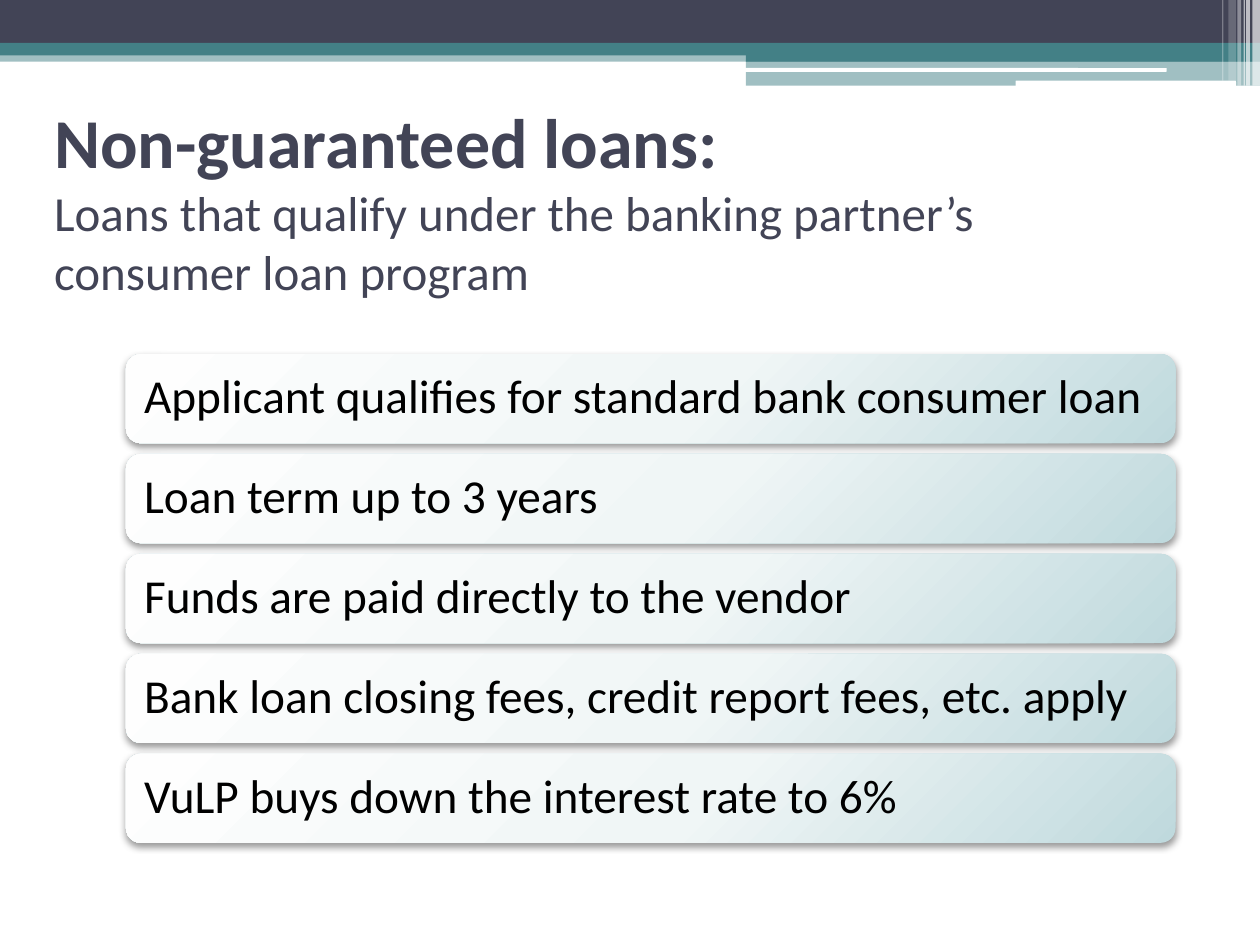
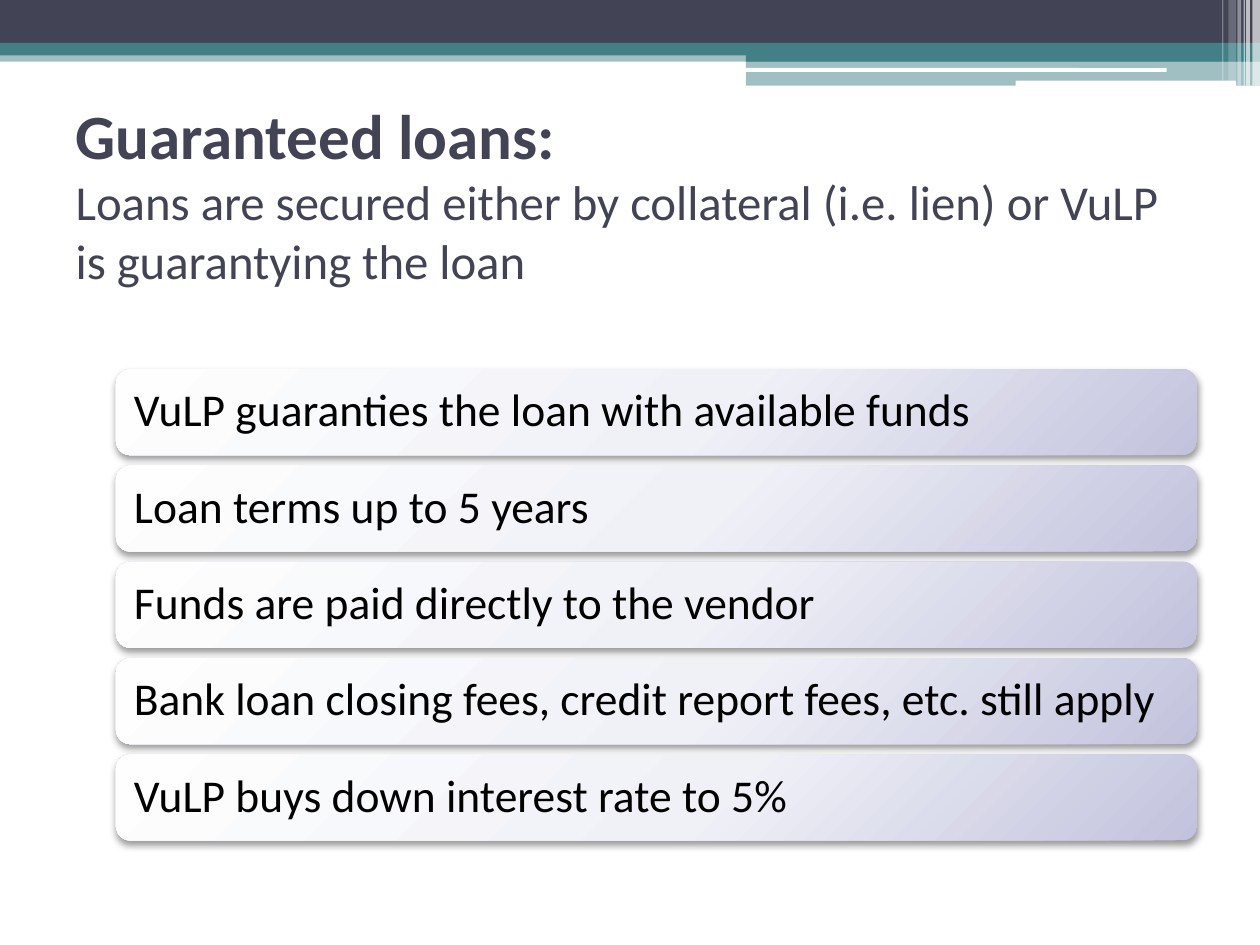
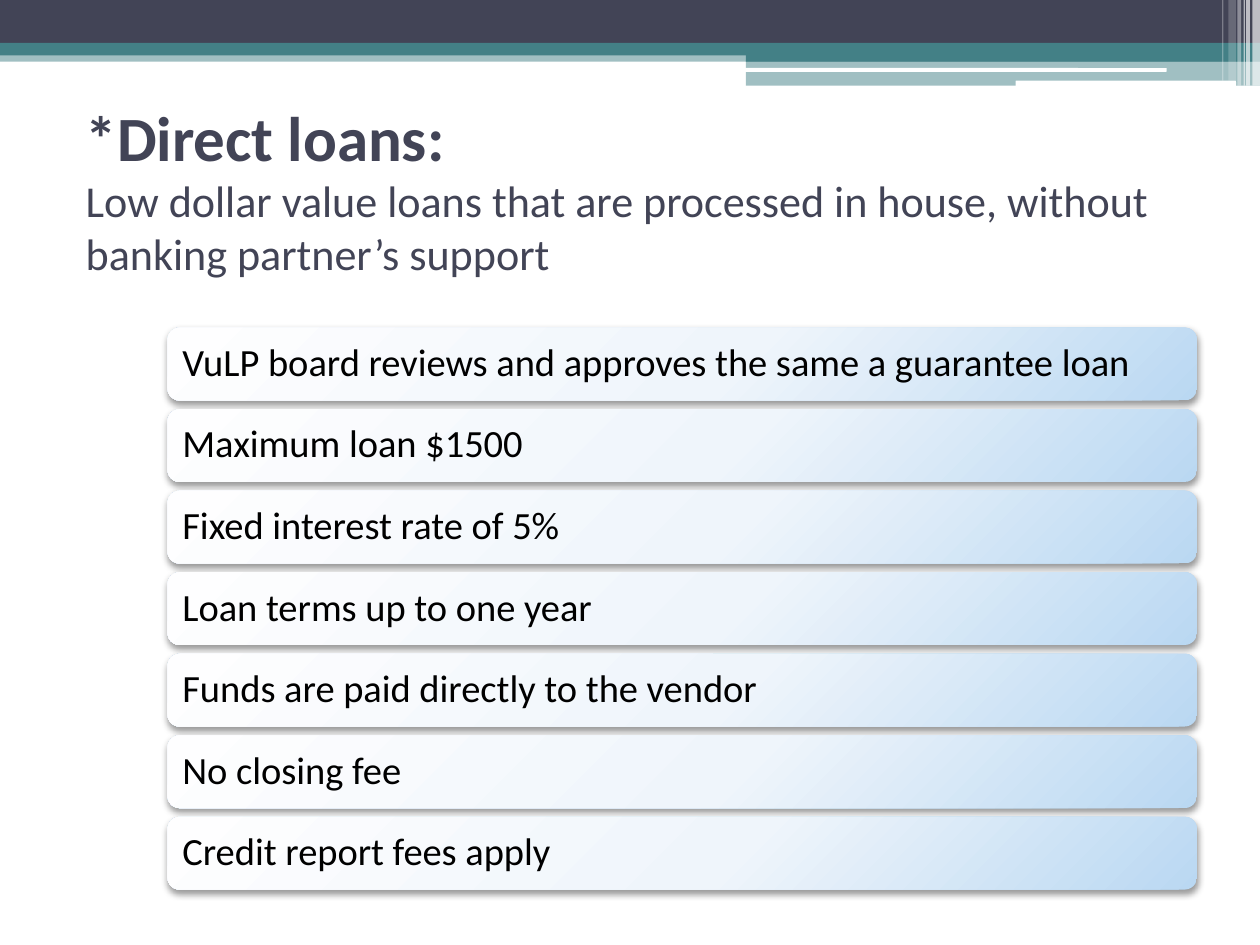
from pptx import Presentation
from pptx.dml.color import RGBColor as Rgb
from pptx.enum.shapes import MSO_SHAPE as Kind
from pptx.enum.text import MSO_ANCHOR as Anchor, MSO_AUTO_SIZE as Fit, PP_ALIGN as Align
from pptx.oxml import parse_xml
from pptx.oxml.ns import nsdecls, qn
from pptx.util import Emu, Inches, Pt

WIDE, HIGH = Inches(10), Inches(7.5)
FONT = "Calibri"
GAP = 0.12
HUES = {"navy": "424456", "teal": "438086", "white": "FFFFFF", "black": "000000"}
FADES = {
    "teal": ("FEFEFE", "F0F6F6", "BFD9DD"),
    "lilac": ("FEFEFE", "F0F1F7", "C2C2DD"),
    "blue": ("FEFEFF", "EFF5FB", "BAD8F2"),
}
BANDS = [
    (0, 5.33, 100, 1.2, "teal", 50),
    (0, 0, 100, 4.53, "navy", 100),
    (0, 4.53, 100, 1.33, "teal", 100),
    (59.2, 5.2, 40.8, 1.33, "teal", 100),
    (59.2, 6.4, 40.8, 2.67, "teal", 50),
]
RULES = [
    (59.1, 7.2, 33.5, 0.4, "white", 100),
    (80.6, 8.53, 17.5, 0.6, "white", 100),
]
STRIPES = [
    (99.4, 0.6, 9.07, 65),
    (98.9, 0.3, 9.07, 65),
    (98.7, 0.1, 9.07, 60),
    (98.2, 0.3, 9.07, 40),
    (97.5, 0.6, 8.53, 20),
    (97, 0.1, 8.53, 30),
]
PAGES = [
    {
        "head": "Non-guaranteed loans: ",
        "note": "Loans that qualify under the banking partner’s consumer loan program",
        "sizes": (40, 28),
        "title": (3.3, 10, 90, 22.27),
        "list": (10, 37.47, 83.3, 51.73),
        "fade": "teal",
        "size": 27,
        "inset": 0.11,
        "items": [
            "Applicant qualifies for standard bank consumer loan",
            "Loan term up to 3 years",
            "Funds are paid directly to the vendor",
            "Bank loan closing fees, credit report fees, etc. apply",
            "VuLP buys down the interest rate to 6%",
        ],
    },
    {
        "head": "Guaranteed loans: ",
        "note": "Loans are secured either by collateral (i.e. lien) or VuLP is guarantying the loan",
        "sizes": (36, 27.9),
        "title": (5, 10, 90, 20.8),
        "list": (9.2, 39.07, 85.8, 49.87),
        "fade": "lilac",
        "size": 26,
        "inset": 0.11,
        "items": [
            "VuLP guaranties the loan with available funds",
            "Loan terms up to 5 years",
            "Funds are paid directly to the vendor",
            "Bank loan closing fees, credit report fees, etc. still apply",
            "VuLP buys down interest rate to 5%",
        ],
    },
    {
        "head": "*Direct loans: ",
        "note": "Low dollar value loans that are processed in house, without banking partner’s support",
        "sizes": (36, 25.2),
        "title": (5.8, 10, 90, 20),
        "list": (13.3, 34.67, 81.7, 59.47),
        "fade": "blue",
        "size": 22,
        "inset": 0.09,
        "items": [
            "VuLP board reviews and approves the same a guarantee loan",
            "Maximum loan $1500",
            "Fixed interest rate of 5%",
            "Loan terms up to one year",
            "Funds are paid directly to the vendor",
            "No closing fee",
            "Credit report fees apply",
        ],
    },
]


def scale(box):
    """Turn a box in percent of the slide into lengths."""
    return [Emu(round(part * side / 100)) for part, side in zip(box, (WIDE, HIGH) * 2)]


def style(run, size, hue, bold=False):
    """Format one run."""
    font = run.font
    font.name, font.size, font.bold = FONT, Pt(size), bold
    font.color.rgb = Rgb.from_string(HUES[hue])


def bar(slide, kind, box, hue, alpha):
    """Add one flat bar and return it."""
    shape = slide.shapes.add_shape(kind, *scale(box))
    shape.shadow.inherit = False
    shape.line.fill.background()
    shape.fill.solid()
    shape.fill.fore_color.rgb = Rgb.from_string(HUES[hue])
    if alpha < 100:
        tint = shape.element.spPr.find(".//" + qn("a:srgbClr"))
        tint.append(parse_xml(f'<a:alpha {nsdecls("a")} val="{alpha * 1000}"/>'))
    return shape


def banner(slide, layout):
    """Draw the top bands and hand them to the layout that all slides share."""
    bars = [bar(slide, Kind.RECTANGLE, row[:4], *row[4:]) for row in BANDS]
    bars += [bar(slide, Kind.ROUNDED_RECTANGLE, row[:4], *row[4:]) for row in RULES]
    bars += [bar(slide, Kind.RECTANGLE, (x, 0, w, h), "white", alpha)
             for x, w, h, alpha in STRIPES]
    for shape in bars:
        layout.shapes.element.append(shape.element)


def heading(slide, box, head, note, sizes):
    """Fill the title with a bold head and a plain note."""
    title = slide.shapes.title
    title.left, title.top, title.width, title.height = scale(box)
    frame = title.text_frame
    frame.text = f"{head}\n{note}"
    frame.auto_size, frame.vertical_anchor = Fit.NONE, Anchor.MIDDLE
    for para, size, bold in zip(frame.paragraphs, sizes, (True, False)):
        para.alignment = Align.LEFT
        style(para.runs[0], size, "navy", bold)


def shade(shape, fade):
    """Give a shape its radial fade and soft shadow."""
    stops = "".join(f'<a:gs pos="{pos}"><a:srgbClr val="{hue}"/></a:gs>'
                    for pos, hue in zip((0, 55000, 100000), FADES[fade]))
    props = shape.element.spPr
    props.append(parse_xml(
        f'<a:gradFill {nsdecls("a")} rotWithShape="1"><a:gsLst>{stops}</a:gsLst>'
        '<a:path path="circle"><a:fillToRect l="-40000" t="-90000" r="140000" b="190000"/>'
        '</a:path></a:gradFill>'))
    shape.line.fill.background()
    props.append(parse_xml(
        f'<a:effectLst {nsdecls("a")}><a:outerShdw blurRad="52000" dist="25400" dir="5400000" '
        f'rotWithShape="0"><a:srgbClr val="{HUES["black"]}"><a:alpha val="40000"/></a:srgbClr>'
        '</a:outerShdw></a:effectLst>'))


def stack(slide, box, items, fade, size, inset):
    """Stack one rounded row for each item in the box."""
    left, top, width, height = box
    row = height / (len(items) + GAP * (len(items) - 1))
    for i, item in enumerate(items):
        spot = scale((left, top + i * row * (1 + GAP), width, row))
        shape = slide.shapes.add_shape(Kind.ROUNDED_RECTANGLE, *spot)
        shade(shape, fade)
        frame = shape.text_frame
        frame.text = item
        frame.word_wrap, frame.vertical_anchor = True, Anchor.MIDDLE
        frame.margin_left = frame.margin_right = Inches(inset)
        frame.margin_top = frame.margin_bottom = Inches(inset)
        para = frame.paragraphs[0]
        para.alignment, para.line_spacing = Align.LEFT, 0.9
        style(para.runs[0], size, "black")


def main():
    """Build the deck."""
    deck = Presentation()
    deck.slide_width, deck.slide_height = WIDE, HIGH
    layout = deck.slide_layouts[5]
    for spare in list(layout.placeholders)[1:]:
        layout.shapes.element.remove(spare.element)
    for i, page in enumerate(PAGES):
        slide = deck.slides.add_slide(layout)
        if i == 0:
            banner(slide, layout)
        heading(slide, page["title"], page["head"], page["note"], page["sizes"])
        stack(slide, page["list"], page["items"], page["fade"], page["size"], page["inset"])
    deck.save("out.pptx")


if __name__ == "__main__":
    main()
